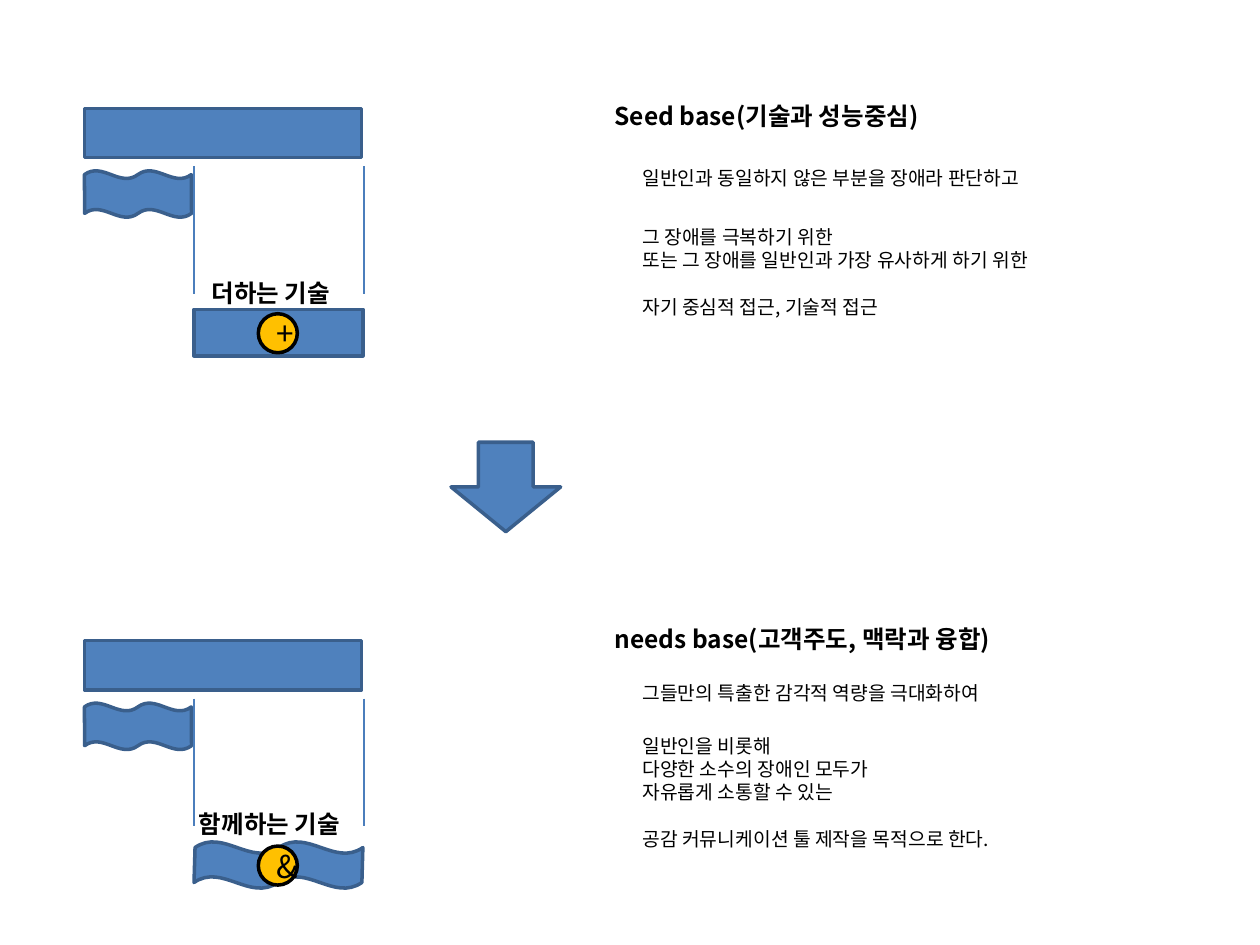
from lxml import etree
from pptx import Presentation
from pptx import util as u
from pptx.dml.color import RGBColor
from pptx.enum import shapes, text
from pptx.oxml.ns import qn

COLS, ROWS = 100, 75
BLUE, EDGE, RULE = "4F81BD", "3A5F8C", "4B7EBC"
AMBER, BLACK = "FFC000", "000000"
KIND = shapes.MSO_SHAPE


def rgb(value):
    return RGBColor.from_string(value)


class Deck:
    """Style and current slide; lengths are columns and rows of the grid."""
    font = "Noto Sans CJK KR"
    leading = 1.2

    def __init__(self):
        self.prs = Presentation()
        self.prs.slide_width, self.prs.slide_height = u.Inches(10), u.Inches(7.5)
        self.s = self.prs.slides.add_slide(self.prs.slide_layouts[6])

    def grid(self, x, y):
        return (u.Emu(round(x * self.prs.slide_width / COLS)),
                u.Emu(round(y * self.prs.slide_height / ROWS)))

    def shape(self, kind, x, y, w, h, fill=BLUE, edge=EDGE, adj=(), turn=0):
        sp = self.s.shapes.add_shape(kind, *self.grid(x, y), *self.grid(w, h))
        sp.shadow.inherit = False
        sp.fill.solid()
        sp.fill.fore_color.rgb = rgb(fill)
        sp.line.color.rgb = rgb(edge)
        sp.line.width = u.Pt(2)
        sp.rotation = turn
        for i, value in enumerate(adj):
            sp.adjustments[i] = value
        return sp

    def rule(self, x, top, bottom):
        """Thin vertical line."""
        cx = self.s.shapes.add_connector(
            shapes.MSO_CONNECTOR.STRAIGHT, *self.grid(x, top), *self.grid(x, bottom))
        cx.line.color.rgb = rgb(RULE)
        cx.line.width = u.Pt(0.75)
        etree.SubElement(cx._element.spPr, qn("a:effectLst"))

    def add_words(self, p, words, size, bold=False):
        p.line_spacing = u.Pt(size * self.leading)
        r = p.add_run()
        r.text = words
        r.font.name, r.font.size, r.font.bold = self.font, u.Pt(size), bold
        r.font.color.rgb = rgb(BLACK)
        ea = etree.SubElement(r._r.get_or_add_rPr(), qn("a:ea"))
        ea.set("typeface", self.font)

    def label(self, x, y, w, h, lines, size=11, bold=False, spaced=()):
        """Text box; lines whose index is in spaced stand one line lower."""
        tf = self.s.shapes.add_textbox(*self.grid(x, y), *self.grid(w, h)).text_frame
        tf.word_wrap = True
        for i, words in enumerate(lines):
            p = tf.paragraphs[0] if i == 0 else tf.add_paragraph()
            if i in spaced:
                p.space_before = u.Pt(size * self.leading)
            self.add_words(p, words, size, bold)

    def heading(self, x, y, w, words):
        self.label(x, y, w, 3.4, [words], size=14, bold=True)

    def badge(self, x, y, sign):
        sp = self.shape(KIND.OVAL, x, y, 3.1, 3.1, AMBER, BLACK)
        tf = sp.text_frame
        tf.word_wrap = True
        tf.vertical_anchor = text.MSO_ANCHOR.MIDDLE
        p = tf.paragraphs[0]
        p.alignment = text.PP_ALIGN.CENTER
        self.add_words(p, sign, 18)

    def diagram(self, top, sign, part, **style):
        """Full bar above, a wavy part and the part that completes it below."""
        self.shape(KIND.RECTANGLE, 6.7, top, 22, 3.9)
        self.shape(KIND.DOUBLE_WAVE, 6.7, top + 4.95, 8.5, 3.7, adj=(0.085, 0.001))
        self.shape(part, 15.4, top + 15.95, 13.4, 3.7, **style)
        for x in (15.4, 28.9):
            self.rule(x, top + 4.6, top + 14.7)
        self.badge(20.5, top + 16.3, sign)


def main():
    deck = Deck()
    deck.diagram(8.6, "+", KIND.RECTANGLE)
    deck.heading(15.8, 21.6, 12.5, "더하는 기술")
    deck.heading(47.8, 7.5, 27.3, "Seed base(기술과 성능중심)")
    deck.label(50, 12.7, 35.6, 2.9, ["일반인과 동일하지 않은 부분을 장애라 판단하고"])
    deck.label(50, 17.4, 37.2, 8.4, [
        "그 장애를 극복하기 위한",
        "또는 그 장애를 일반인과 가장 유사하게 하기 위한",
        "자기 중심적 접근, 기술적 접근"], spaced=(2,))

    deck.shape(KIND.DOWN_ARROW, 35.8, 35.1, 8.7, 7.1)

    deck.diagram(50.85, "&", KIND.DOUBLE_WAVE, adj=(0.125, -0.003), turn=180)
    deck.heading(14.8, 63.7, 14.5, "함께하는 기술")
    deck.heading(47.8, 49, 33.4, "needs base(고객주도, 맥락과 융합)")
    deck.label(50, 53.6, 32, 2.9, ["그들만의 특출한 감각적 역량을 극대화하여"])
    deck.label(50, 57.8, 32.8, 10.3, [
        "일반인을 비롯해",
        "다양한 소수의 장애인 모두가",
        "자유롭게 소통할 수 있는",
        "공감 커뮤니케이션 툴 제작을 목적으로 한다."], spaced=(3,))
    deck.prs.save("out.pptx")


if __name__ == "__main__":
    main()
